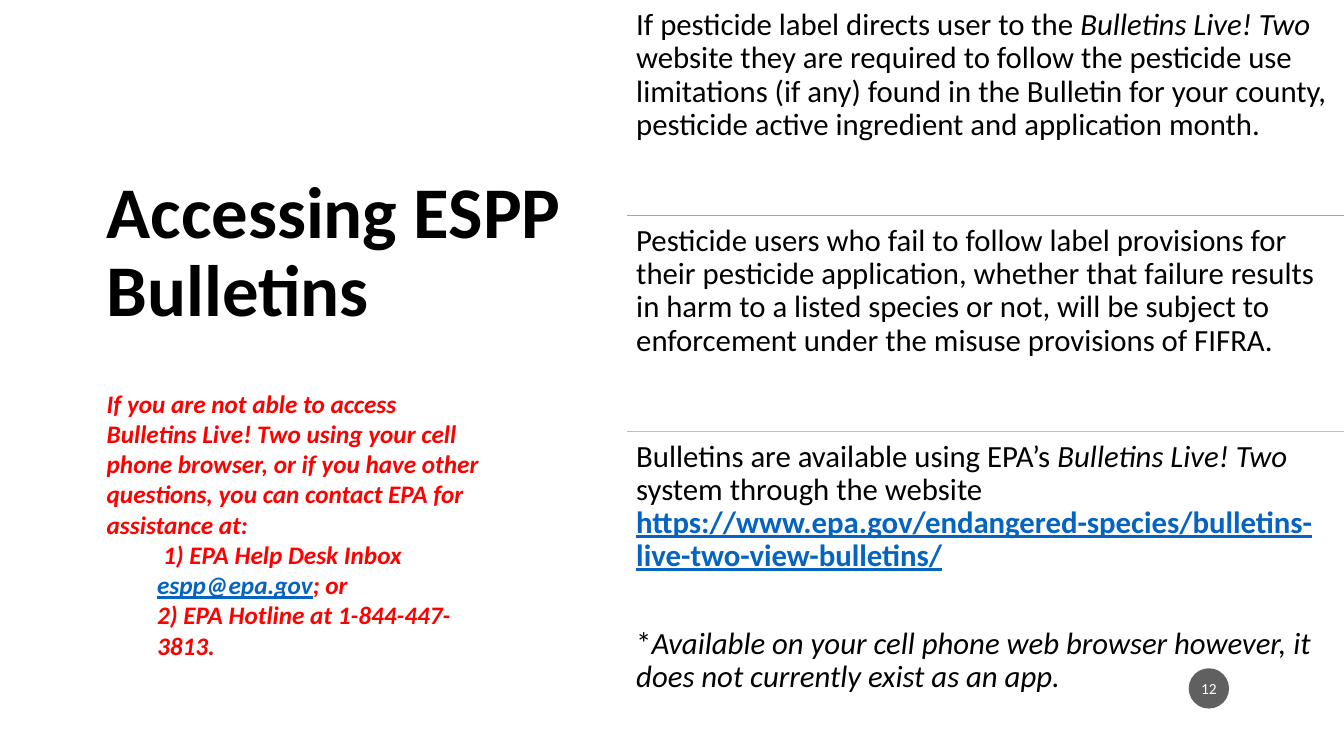
from lxml import etree
from pptx import Presentation
from pptx.dml.color import RGBColor
from pptx.enum.shapes import MSO_CONNECTOR, MSO_SHAPE
from pptx.enum.text import MSO_ANCHOR, PP_ALIGN
from pptx.oxml.ns import qn
from pptx.util import Pt

EMU_PER_PX = 9144
STRAIGHT = MSO_CONNECTOR.STRAIGHT
OVAL = MSO_SHAPE.OVAL
TOP, MIDDLE = MSO_ANCHOR.TOP, MSO_ANCHOR.MIDDLE
CENTER = PP_ALIGN.CENTER
FONT = "Calibri"
BLACK, RED, LINK, WHITE = "000000", "FF0000", "0563C1", "FFFFFF"
GRAY, GOLD, DARK = "A5A5A5", "FFC000", "1D1D1D"
ITALIC = {"italic": True}
WEB_LINK = {"color": LINK, "bold": True, "underline": True}
MAIL_LINK = {"color": LINK, "underline": True}

RULES = [
    [
        ("If pesticide label directs user to the ", {}),
        ("Bulletins Live! Two", ITALIC),
        (" website they are required to follow the pesticide use limitations (if any) "
         "found in the Bulletin for your county, pesticide active ingredient and "
         "application month.", {}),
    ],
    [
        ("Pesticide users who fail to follow label provisions for their pesticide "
         "application, whether that failure results in harm to a listed species or not, "
         "will be subject to enforcement under the misuse provisions of FIFRA.", {}),
    ],
]
WEBSITE = [
    ("Bulletins are available using EPA’s ", {}),
    ("Bulletins Live! Two", ITALIC),
    (" system through the website ", {}),
    ("https://www.epa.gov/endangered-species/bulletins-live-two-view-bulletins/", WEB_LINK),
]
APP_NOTE = [
    ("*", {}),
    ("Available on your cell phone web browser however, it does not currently exist "
     "as an app.", ITALIC),
]
HELP_INTRO = [
    ("If you are not able to access Bulletins Live! Two using your cell phone browser, "
     "or if you have other questions, you can contact EPA for assistance at:", {}),
]
HELP_INBOX = [
    ("1) EPA Help Desk Inbox ", {}),
    ("espp@epa.gov", MAIL_LINK),
    ("; or", {}),
]
HELP_HOTLINE = [("2) EPA Hotline at 1-844-447-3813.", {})]


def px(n):
    """Turn pixels into EMU."""
    return n * EMU_PER_PX


def rgb(color):
    """Turn a hex string into a colour."""
    return RGBColor.from_string(color)


def add_runs(p, runs, size, color=BLACK, **style):
    """Add styled runs to a paragraph."""
    for text, changes in runs:
        look = {"color": color, **style, **changes}
        r = p.add_run()
        r.text = text
        r.font.name = FONT
        r.font.size = Pt(size)
        r.font.color.rgb = rgb(look["color"])
        r.font.bold = look.get("bold", False)
        r.font.italic = look.get("italic", False)
        r.font.underline = look.get("underline", False)


def add_textbox(slide, x, y, w, h, anchor=TOP):
    """Add a wrapping text box and return its text frame."""
    tf = slide.shapes.add_textbox(px(x), px(y), px(w), px(h)).text_frame
    tf.word_wrap = True
    tf.vertical_anchor = anchor
    return tf


def add_title(slide, x, y, w, h):
    """Place the slide title."""
    p = add_textbox(slide, x, y, w, h, MIDDLE).paragraphs[0]
    p.line_spacing = 0.9
    add_runs(p, [("Accessing ESPP Bulletins", {})], 52, bold=True)


def add_help(slide, x, y, w, h):
    """Place the red contact note with its two indented entries."""
    tf = add_textbox(slide, x, y, w, h)
    entries = [(HELP_INTRO, 0, 0), (HELP_INBOX, 50, 6), (HELP_HOTLINE, 50, 0)]
    for i, (runs, margin, indent) in enumerate(entries):
        p = tf.add_paragraph() if i else tf.paragraphs[0]
        pPr = p._p.get_or_add_pPr()
        pPr.set("marL", str(px(margin)))
        pPr.set("indent", str(px(indent)))
        add_runs(p, runs, 18, RED, bold=True, italic=True)


def add_divider(slide, x, y, w, color):
    """Draw a thin horizontal line."""
    line = slide.shapes.add_connector(STRAIGHT, px(x), px(y), px(x + w), px(y))
    line.line.color.rgb = rgb(color)
    line.line.width = Pt(1)
    etree.SubElement(line._element.spPr, qn("a:effectLst"))


def add_rules(slide, x, y, w, row_h, last_h):
    """Stack the three text sections with a line between them."""
    sections = [[runs] for runs in RULES] + [[WEBSITE, APP_NOTE]]
    for i, section in enumerate(sections):
        top = y + i * row_h
        if i:
            add_divider(slide, x, top, w, (GRAY, GOLD)[i - 1])
        tf = add_textbox(slide, x, top, w, last_h if i == len(RULES) else row_h)
        tf.margin_left = tf.margin_right = tf.margin_top = tf.margin_bottom = px(9)
        for j, runs in enumerate(section):
            p = tf.add_paragraph() if j else tf.paragraphs[0]
            p.line_spacing = 0.9
            if j:
                p.space_before = Pt(39)
            add_runs(p, runs, 22)


def add_page_number(slide, x, y, d):
    """Place the page number in a translucent circle."""
    sp = slide.shapes.add_shape(OVAL, px(x), px(y), px(d), px(d))
    sp.shadow.inherit = False
    sp.fill.solid()
    sp.fill.fore_color.rgb = rgb(DARK)
    fill_color = sp._element.spPr.find(qn("a:solidFill"))[0]
    etree.SubElement(fill_color, qn("a:alpha")).set("val", "70000")
    sp.line.fill.background()
    tf = sp.text_frame
    tf.margin_left = tf.margin_right = px(2)
    tf.margin_top = tf.margin_bottom = px(5)
    tf.vertical_anchor = MIDDLE
    p = tf.paragraphs[0]
    p.alignment = CENTER
    add_runs(p, [("12", {})], 11, WHITE)


def main():
    """Build the slide and save it."""
    prs = Presentation()
    prs.slide_width, prs.slide_height = px(1333), px(750)
    slide = prs.slides.add_slide(prs.slide_layouts[6])
    add_title(slide, 96, 166, 483, 172)
    add_rules(slide, 622, 0, 711, 214, 321)
    add_help(slide, 96, 380, 402, 283)
    add_page_number(slide, 1179, 663, 40)
    prs.save("out.pptx")


if __name__ == "__main__":
    main()
